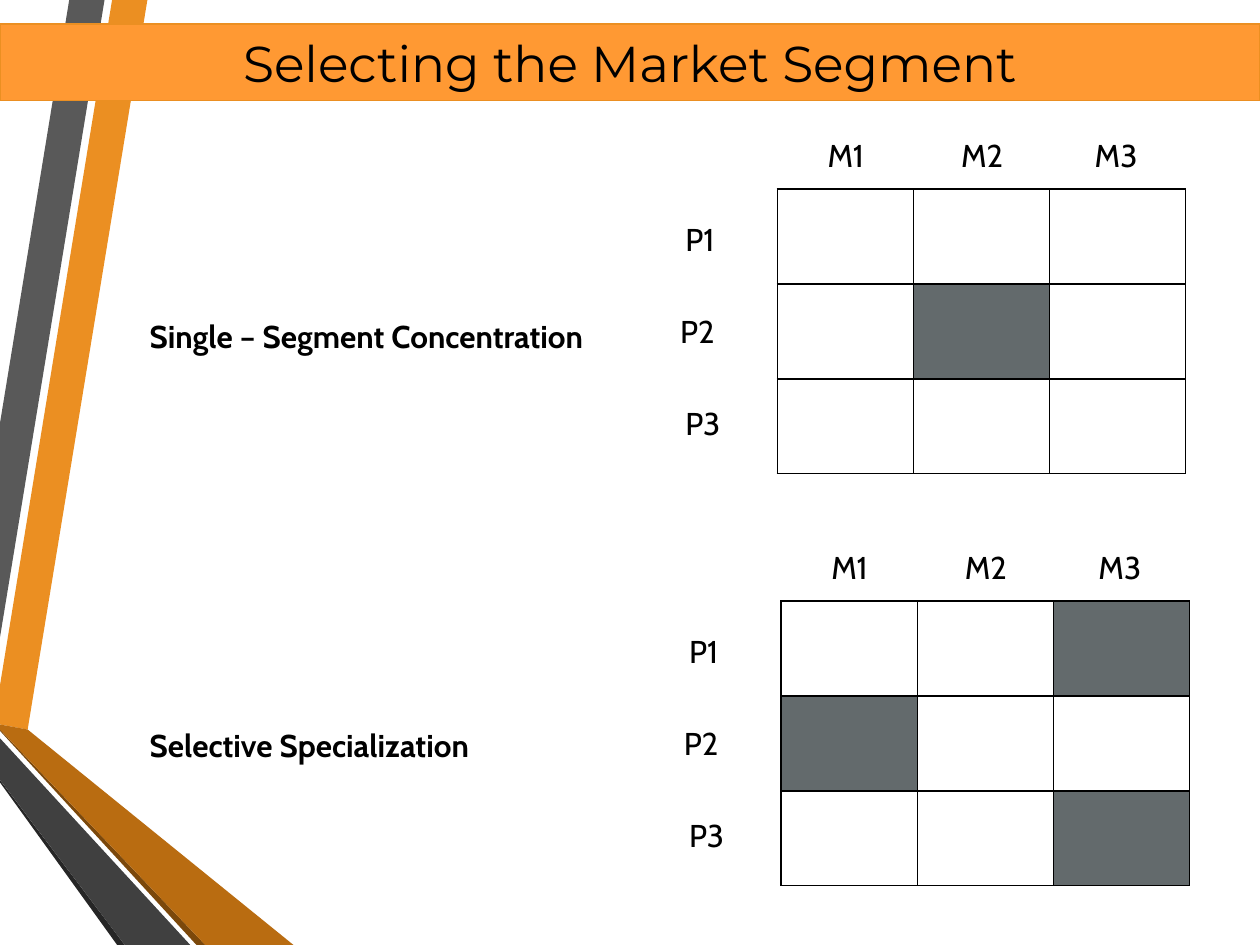
"""Build a slide on selecting the market segment with two product-market grids."""
from lxml import etree
from pptx import Presentation
from pptx import util as u
from pptx.dml.color import RGBColor
from pptx.enum import shapes, text
from pptx.oxml import ns

BLACK = RGBColor(0x00, 0x00, 0x00)
BANNER = RGBColor(0xFF, 0x99, 0x33)
ORANGE = RGBColor(0xEB, 0x8F, 0x22)
SLATE = RGBColor(0x63, 0x6A, 0x6C)

TITLE = "Selecting the Market Segment"
BANDS = [
    (ORANGE, [(0, 5.44), (0, 5.75), (0.22, 5.79), (1.17, 0), (0.89, 0)]),
    (RGBColor(0x59, 0x59, 0x59), [(0.83, 0), (0.55, 0), (0, 3.36), (0, 5.06)]),
    (RGBColor(0x26, 0x26, 0x26), [(0, 6.19), (0, 6.21), (0.93, 7.5), (0.99, 7.5)]),
    (RGBColor(0x7B, 0x48, 0x0B), [(0, 5.79), (0, 5.8), (1.56, 7.5), (1.63, 7.5)]),
    (RGBColor(0xB9, 0x6C, 0x11),
     [(0, 5.79), (1.63, 7.5), (2.33, 7.5), (0.22, 5.79), (0, 5.75)]),
    (RGBColor(0x40, 0x40, 0x40), [(0, 6.19), (0.99, 7.5), (1.51, 7.5), (0, 5.86)]),
]
MARKETS = ["M1", "M2", "M3"]
GOODS = [("P1", -0.83), ("P2", -0.87), ("P3", -0.83)]
GRIDS = [
    {"name": "Single – Segment Concentration", "name_top": 2.47,
     "left": 6.17, "top": 1.5, "picked": {(1, 1)}},
    {"name": "Selective Specialization", "name_top": 5.72,
     "left": 6.2, "top": 4.77, "picked": {(0, 2), (1, 0), (2, 2)}},
]
SIDE, TALL = 3.24, 2.26


def box(*args):
    return [u.Inches(n) for n in args]


def write(frame, words, size, font, bold=False):
    run = frame.paragraphs[0].add_run()
    run.text = words
    run.font.size = u.Pt(size)
    run.font.name = font
    run.font.bold = bold
    run.font.color.rgb = BLACK


def add_band(slide, color, points):
    pts = [box(*point) for point in points]
    pen = slide.shapes.build_freeform(*pts[0], scale=1.0)
    pen.add_line_segments(pts[1:], close=True)
    band = pen.convert_to_shape()
    band.shadow.inherit = False
    band.fill.solid()
    band.fill.fore_color.rgb = color
    band.line.fill.background()


def add_title(slide):
    title = slide.shapes.title
    title.left, title.top, title.width, title.height = box(0, 0.19, 10, 0.61)
    title.fill.solid()
    title.fill.fore_color.rgb = BANNER
    title.line.color.rgb = ORANGE
    title.line.width = u.Pt(0.75)
    frame = title.text_frame
    frame.vertical_anchor = text.MSO_ANCHOR.MIDDLE
    frame.paragraphs[0].alignment = text.PP_ALIGN.CENTER
    write(frame, TITLE, 28.8, "Montserrat")
    slide.shapes._spTree.append(title._element)


def add_label(slide, words, place, bold=False):
    frame = slide.shapes.add_textbox(*box(*place)).text_frame
    frame.word_wrap = True
    if bold:
        frame.vertical_anchor = text.MSO_ANCHOR.MIDDLE
    write(frame, words, 18, "Cabin", bold)


def add_edges(cell):
    props = cell._tc.get_or_add_tcPr()
    for i, side in enumerate(("lnL", "lnR", "lnT", "lnB")):
        edge = etree.Element(ns.qn("a:" + side), w=str(u.Pt(1)))
        fill = etree.SubElement(edge, ns.qn("a:solidFill"))
        etree.SubElement(fill, ns.qn("a:srgbClr"), val=str(BLACK))
        props.insert(i, edge)


def add_grid(slide, grid):
    left, top = grid["left"], grid["top"]
    add_label(slide, grid["name"], (1.09, grid["name_top"], 3.76, 0.39), True)
    rows, cols = len(GOODS), len(MARKETS)
    table = slide.shapes.add_table(rows, cols, *box(left, top, SIDE, TALL)).table
    table.first_row = table.horz_banding = False
    for r in range(rows):
        for c in range(cols):
            cell = table.cell(r, c)
            if (r, c) in grid["picked"]:
                cell.fill.solid()
                cell.fill.fore_color.rgb = SLATE
            else:
                cell.fill.background()
            add_edges(cell)
    for r, (name, shift) in enumerate(GOODS):
        add_label(slide, name, (left + shift, top + 0.2 + 0.73 * r, 0.49, 0.4))
    for c, name in enumerate(MARKETS):
        add_label(slide, name, (left + 0.3 + 1.06 * c, top - 0.47, 0.6, 0.4))


def main():
    deck = Presentation()
    deck.slide_width, deck.slide_height = box(10, 7.5)
    slide = deck.slides.add_slide(deck.slide_layouts.get_by_name("Title Only"))
    for color, points in BANDS:
        add_band(slide, color, points)
    add_title(slide)
    for grid in GRIDS:
        add_grid(slide, grid)
    deck.save("out.pptx")


if __name__ == "__main__":
    main()
